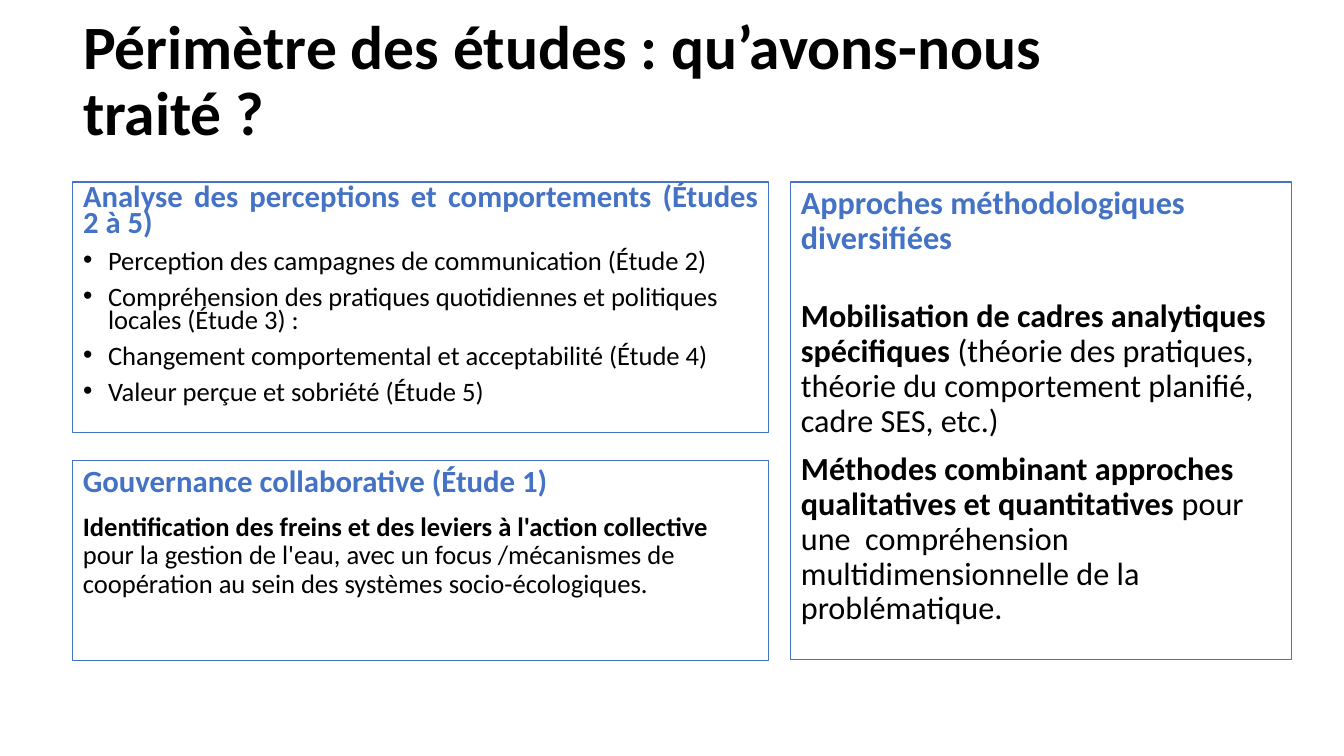
import lxml.etree
import pptx
import pptx.dml.color
import pptx.enum.shapes
import pptx.enum.text
import pptx.oxml.ns
import pptx.util

PX_PER_INCH = 100.8
FONT = "Calibri"
COLORS = {"accent": "4472C4", "text": "000000"}
ALIGN = pptx.enum.text.PP_ALIGN
ANCHOR = pptx.enum.text.MSO_ANCHOR

PERCEPTIONS_BOX = (73, 182, 696, 251)
GOVERNANCE_BOX = (73, 461, 696, 200)
METHODS_BOX = (791, 182, 501, 478)

STUDIES = [
    "Perception des campagnes de communication (Étude 2)",
    "Compréhension des pratiques quotidiennes et politiques locales (Étude 3) :",
    "Changement comportemental et acceptabilité (Étude 4)",
    "Valeur perçue et sobriété (Étude 5)",
]


def px(length):
    return pptx.util.Emu(round(length * 914400 / PX_PER_INCH))


def rgb(color):
    return pptx.dml.color.RGBColor.from_string(COLORS[color])


def place(shape, box):
    shape.left, shape.top, shape.width, shape.height = map(px, box)


def set_bullet(paragraph, hanging):
    """Give the paragraph a hanging bullet, or none when hanging is 0."""
    props = paragraph._p.get_or_add_pPr()
    props.set("marL", str(px(hanging)))
    props.set("indent", str(-px(hanging)))
    tag = "a:buChar" if hanging else "a:buNone"
    bullet = lxml.etree.SubElement(props, pptx.oxml.ns.qn(tag))
    if hanging:
        bullet.set("char", "•")


def add_run(paragraph, text, size, color="text", bold=False):
    run = paragraph.add_run()
    run.text = text
    run.font.name = FONT
    run.font.size = pptx.util.Pt(size)
    run.font.bold = bold
    run.font.color.rgb = rgb(color)


def format_paragraph(paragraph, spacing, align=ALIGN.LEFT, before=10, hanging=0):
    paragraph.alignment = align
    paragraph.line_spacing = spacing
    paragraph.space_before = pptx.util.Pt(before)
    paragraph.space_after = pptx.util.Pt(0)
    set_bullet(paragraph, hanging)


def frame_panel(panel):
    """Outline the panel and return its text frame, ready for text."""
    panel.fill.background()
    panel.line.color.rgb = rgb("accent")
    panel.line.width = pptx.util.Pt(0.75)
    frame = panel.text_frame
    frame.word_wrap = True
    frame.auto_size = pptx.enum.text.MSO_AUTO_SIZE.NONE
    frame.vertical_anchor = ANCHOR.TOP
    return frame


def add_panel(slide, box):
    panel = slide.shapes.add_shape(
        pptx.enum.shapes.MSO_SHAPE.RECTANGLE, *map(px, box))
    panel.shadow.inherit = False
    return frame_panel(panel)


def add_heading(frame, text, size, spacing=0.9, align=ALIGN.LEFT):
    heading = frame.paragraphs[0]
    format_paragraph(heading, spacing, align)
    add_run(heading, text, size, "accent", bold=True)


def add_statement(frame, lead, detail, size, before=10):
    """Add a paragraph with a bold lead followed by plain detail."""
    statement = frame.add_paragraph()
    format_paragraph(statement, 0.9, before=before)
    add_run(statement, lead, size, bold=True)
    add_run(statement, detail, size)


def fill_title(title, text):
    place(title, (73, 39, 1159, 87))
    frame = title.text_frame
    frame.word_wrap = True
    frame.auto_size = pptx.enum.text.MSO_AUTO_SIZE.NONE
    frame.vertical_anchor = ANCHOR.MIDDLE
    format_paragraph(frame.paragraphs[0], 0.9, before=0)
    add_run(frame.paragraphs[0], text, 44, bold=True)


def fill_perceptions(body):
    place(body, PERCEPTIONS_BOX)
    frame = frame_panel(body)
    add_heading(frame, "Analyse des perceptions et comportements (Études 2 à 5) ",
                21.9, spacing=0.7, align=ALIGN.JUSTIFY)
    for study in STUDIES:
        item = frame.add_paragraph()
        format_paragraph(item, 0.7, hanging=25)
        add_run(item, study, 19)


def main():
    deck = pptx.Presentation()
    deck.slide_width, deck.slide_height = px(1344), px(756)
    slide = deck.slides.add_slide(deck.slide_layouts[1])

    fill_title(slide.shapes.title, "Périmètre des études : qu’avons-nous traité ?")
    fill_perceptions(slide.placeholders[1])

    governance = add_panel(slide, GOVERNANCE_BOX)
    add_heading(governance, "Gouvernance collaborative (Étude 1) ", 22,
                align=ALIGN.JUSTIFY)
    add_statement(
        governance,
        "Identification des freins et des leviers à l'action collective ",
        "pour la gestion de l'eau, avec un focus /mécanismes de coopération "
        "au sein des systèmes socio-écologiques.", 19)

    methods = add_panel(slide, METHODS_BOX)
    add_heading(methods, "Approches méthodologiques diversifiées", 23)
    add_statement(
        methods,
        "Mobilisation de cadres analytiques spécifiques ",
        "(théorie des pratiques, théorie du comportement planifié, "
        "cadre SES, etc.)", 23, before=31)
    add_statement(
        methods,
        "Méthodes combinant approches qualitatives et quantitatives ",
        "pour une  compréhension multidimensionnelle de la problématique.", 23)

    deck.save("out.pptx")


if __name__ == "__main__":
    main()
